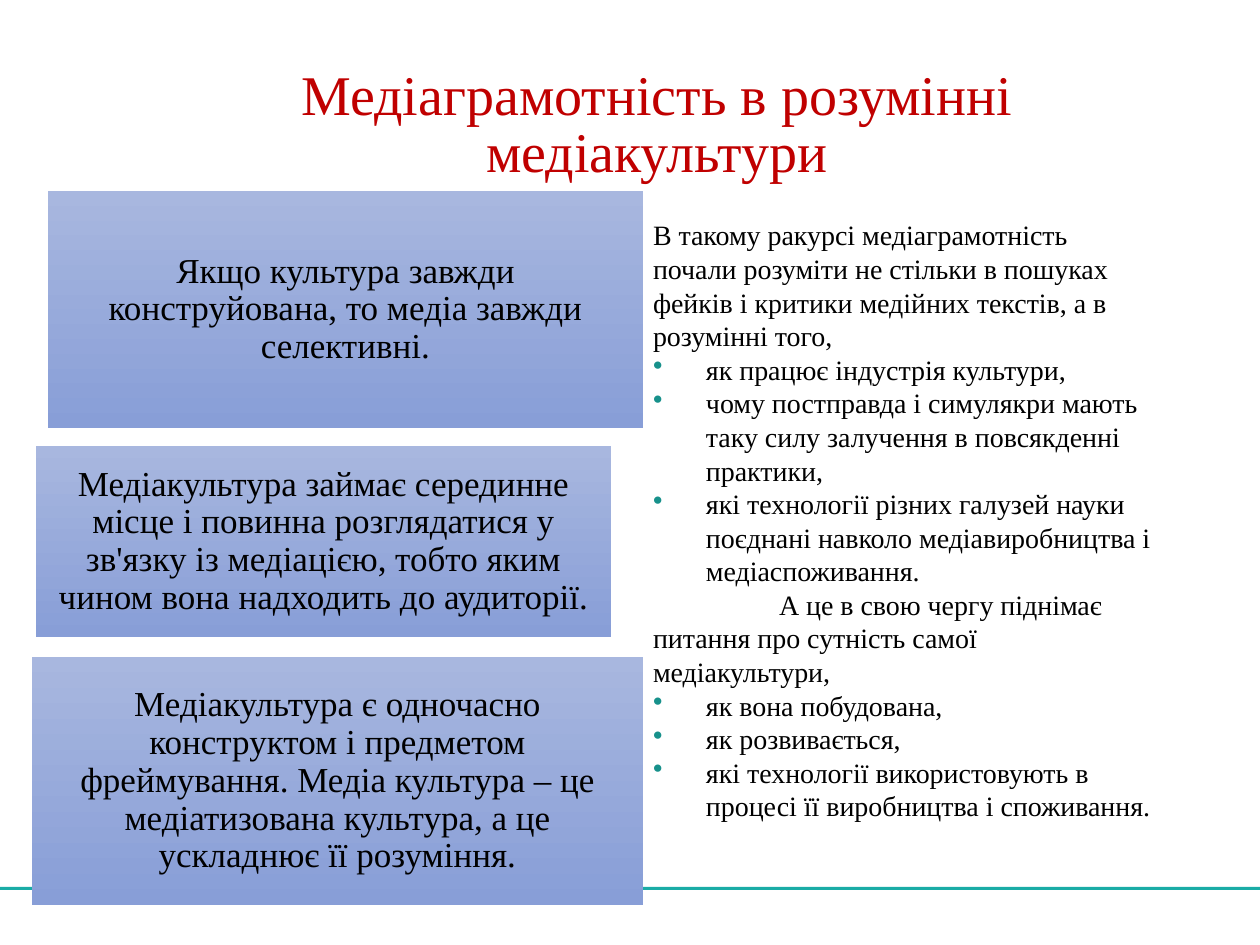
from lxml import etree
from pptx import Presentation
from pptx import util as u
from pptx.dml.color import RGBColor
from pptx.enum import shapes, text
from pptx.oxml import ns

SCALE = 914400 / 126
FONT = "Times New Roman"
TITLE = "Медіаграмотність в розумінні медіакультури"
THESES = [
    ((48, 191, 595, 237), "Якщо культура завжди конструйована, то медіа завжди селективні."),
    ((36, 446, 575, 191), "Медіакультура займає серединне місце і повинна розглядатися у зв'язку "
     "із медіацією, тобто яким чином вона надходить до аудиторії."),
    ((32, 657, 611, 248), "Медіакультура є одночасно конструктом і предметом фреймування. "
     "Медіа культура – це медіатизована культура, а це ускладнює її розуміння."),
]
INTRO, BULLET, CLOSING = (10, 0), (63, -53), (10, 126)
BODY = [
    (INTRO, "В такому ракурсі медіаграмотність почали розуміти не стільки в пошуках фейків "
     "і критики медійних текстів, а в розумінні того,"),
    (BULLET, "як працює індустрія культури,"),
    (BULLET, "чому постправда і симулякри мають таку силу залучення в повсякденні практики,"),
    (BULLET, "які технології різних галузей науки поєднані навколо медіавиробництва "
     "і медіаспоживання."),
    (CLOSING, "А це в свою чергу піднімає питання про сутність самої медіакультури,"),
    (BULLET, "як вона побудована,"),
    (BULLET, "як розвивається,"),
    (BULLET, "які технології використовують в процесі її виробництва і споживання."),
]


def px(length):
    """Turn pixels into EMU."""
    return u.Emu(round(length * SCALE))


def color(value):
    """Turn a hex string into a colour."""
    return RGBColor.from_string(value)


def apply(target, values):
    """Set attributes from a dict."""
    for name, value in values.items():
        setattr(target, name, value)


def format_frame(frame, anchor, inset_x, inset_y):
    """Set wrapping, anchor and insets of a text frame."""
    apply(frame, {
        "word_wrap": True, "auto_size": text.MSO_AUTO_SIZE.NONE, "vertical_anchor": anchor,
        "margin_left": px(inset_x), "margin_right": px(inset_x),
        "margin_top": px(inset_y), "margin_bottom": px(inset_y),
    })


def write(paragraph, words, size, hex_color="000000", **values):
    """Fill a paragraph with one formatted run."""
    apply(paragraph, values)
    run = paragraph.add_run()
    run.text = words
    apply(run.font, {"name": FONT, "size": u.Pt(size), "bold": False})
    run.font.color.rgb = color(hex_color)


def indent(paragraph, margin, first_line, bullet):
    """Set the indents and the bullet of a paragraph."""
    properties = paragraph._p.get_or_add_pPr()
    properties.set("marL", str(px(margin)))
    properties.set("indent", str(px(first_line)))
    if bullet:
        bullet_color = etree.SubElement(properties, ns.qn("a:buClr"))
        etree.SubElement(bullet_color, ns.qn("a:srgbClr"), val="17918B")
        etree.SubElement(properties, ns.qn("a:buChar"), char="•")


def add_rectangle(slide, box):
    """Add a rectangle without outline or shadow."""
    shape = slide.shapes.add_shape(shapes.MSO_SHAPE.RECTANGLE, *map(px, box))
    shape.shadow.inherit = False
    shape.line.fill.background()
    return shape


def add_footer_rule(slide):
    """Add the thin band across the slide."""
    shape = add_rectangle(slide, (0, 887, 1260, 3))
    shape.fill.solid()
    shape.fill.fore_color.rgb = color("1AACA6")


def add_title(slide):
    """Place and format the title."""
    title = slide.shapes.title
    apply(title, dict(zip(("left", "top", "width", "height"), map(px, (161, 39, 992, 151)))))
    format_frame(title.text_frame, text.MSO_ANCHOR.BOTTOM, 13, 6)
    write(title.text_frame.paragraphs[0], TITLE, 32, "C00000",
          alignment=text.PP_ALIGN.CENTER, line_spacing=0.85)


def add_body(slide):
    """Add the explanation with its bullets."""
    frame = slide.shapes.add_textbox(*map(px, (643, 212, 510, 665))).text_frame
    format_frame(frame, text.MSO_ANCHOR.TOP, 0, 6)
    for index, (style, words) in enumerate(BODY):
        paragraph = frame.add_paragraph() if index else frame.paragraphs[0]
        paragraph.line_spacing = u.Pt(19.2)
        indent(paragraph, *style, bullet=style == BULLET)
        write(paragraph, words, 16)


def add_thesis(slide, box, words):
    """Add a gradient panel with centred text."""
    shape = add_rectangle(slide, box)
    shape.fill.gradient()
    shape.fill.gradient_angle = 270
    for stop, value in zip(shape.fill.gradient_stops, ("A8B7DF", "889ED7")):
        stop.color.rgb = color(value)
    format_frame(shape.text_frame, text.MSO_ANCHOR.MIDDLE, 10, 10)
    write(shape.text_frame.paragraphs[0], words, 20,
          alignment=text.PP_ALIGN.CENTER, line_spacing=0.9)


def main():
    """Build the slide."""
    presentation = Presentation()
    apply(presentation, {"slide_width": px(1260), "slide_height": px(945)})
    slide = presentation.slides.add_slide(presentation.slide_layouts[5])
    add_footer_rule(slide)
    add_title(slide)
    add_body(slide)
    for box, words in THESES:
        add_thesis(slide, box, words)
    presentation.save("out.pptx")


if __name__ == "__main__":
    main()
